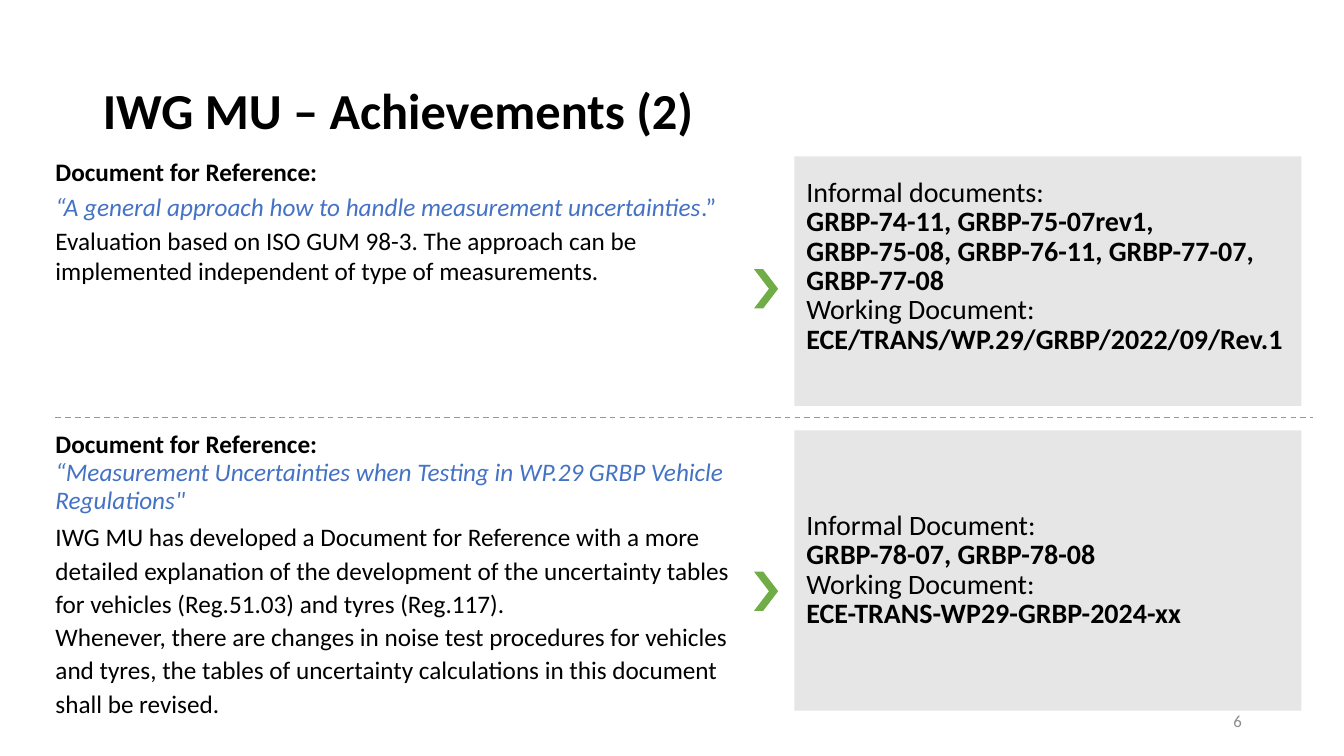
from dataclasses import dataclass

from lxml import etree
from pptx import Presentation
from pptx.dml.color import RGBColor
from pptx.enum.dml import MSO_LINE
from pptx.enum.shapes import MSO_CONNECTOR, MSO_SHAPE
from pptx.enum.text import MSO_ANCHOR, MSO_AUTO_SIZE, PP_ALIGN
from pptx.oxml.ns import qn
from pptx.util import Inches, Length, Pt

DASH = MSO_LINE.DASH
STRAIGHT = MSO_CONNECTOR.STRAIGHT
CHEVRON, RECTANGLE = MSO_SHAPE.CHEVRON, MSO_SHAPE.RECTANGLE
TOP, MIDDLE = MSO_ANCHOR.TOP, MSO_ANCHOR.MIDDLE
LEFT, RIGHT = PP_ALIGN.LEFT, PP_ALIGN.RIGHT
TITLE_ONLY = 5


@dataclass(frozen=True)
class Theme:
    font: str = "Calibri"
    black: str = "000000"
    blue: str = "4472C4"
    green: str = "70AD47"
    orange: str = "ED7D31"
    panel: str = "E7E6E6"
    gray: str = "8C8C8C"
    title: int = 36
    panel_text: int = 20
    body: int = 18
    number: int = 12


THEME = Theme()


@dataclass(frozen=True)
class Frame:
    """Place on the slide, in percent of its width and height."""
    left: float
    top: float
    width: float
    height: float

    def lengths(self) -> tuple[Length, Length, Length, Length]:
        return across(self.left), down(self.top), across(self.width), down(self.height)


@dataclass(frozen=True)
class Piece:
    text: str
    bold: bool = False
    italic: bool = False
    color: str = THEME.black


@dataclass(frozen=True)
class Block:
    """One paragraph; spacing is a share of the line or a length."""
    pieces: tuple[Piece, ...]
    spacing: float | Length = 1.0
    before: int = 0


@dataclass(frozen=True)
class Topic:
    """One row of the slide: description, chevron and document panel."""
    top: float
    text_height: float
    panel_height: float
    chevron_top: float
    description: tuple[Block, ...]
    documents: tuple[Piece, ...]
    panel_bottom_inset: float


SLIDE_WIDTH, SLIDE_HEIGHT = Inches(13.33), Inches(7.5)
TEXT_LEFT, TEXT_WIDTH = 4.13, 52.13
CHEVRON_LEFT, CHEVRON_WIDTH, CHEVRON_HEIGHT = 56.1, 1.8, 5.2
PANEL_LEFT, PANEL_WIDTH = 59.1, 37.73
RULE_TOP, RULE_RIGHT = 55.2, 97.67
TITLE_FRAME = Frame(6.9, 5.33, 86.25, 19.33)
NUMBER_FRAME = Frame(70.65, 92.67, 22.5, 5.33)
NO_INSETS = (0, 0, 0, 0)
DEFAULT_INSETS = (0.1, 0.05, 0.1, 0.05)

TOPICS = (
    Topic(
        20.7, 33, 33, 35.6,
        (
            Block((Piece("Document for Reference:", bold=True),)),
            Block((
                Piece("“A general approach how to handle measurement uncertainties",
                      italic=True, color=THEME.blue),
                Piece(".”", color=THEME.blue),
            ), before=3),
            Block((Piece("Evaluation based on ISO GUM 98-3. The approach can be "
                         "implemented independent of type of measurements."),), before=3),
        ),
        (
            Piece("Informal documents:"),
            Piece("GRBP-74-11, GRBP-75-07rev1, \n"
                  "GRBP-75-08, GRBP-76-11, GRBP-77-07, GRBP-77-08", bold=True),
            Piece("Working Document:"),
            Piece("ECE/TRANS/WP.29/GRBP/2022/09/Rev.1", bold=True),
        ),
        0.37,
    ),
    Topic(
        56.93, 37.73, 37.07, 75.6,
        (
            Block((
                Piece("Document for Reference:\n", bold=True),
                Piece("“Measurement Uncertainties when Testing in WP.29 GRBP Vehicle "
                      'Regulations"', italic=True, color=THEME.blue),
            ), Pt(20)),
            Block((Piece(
                "IWG MU has developed a Document for Reference with a more detailed "
                "explanation of the development of the uncertainty tables for vehicles "
                "(Reg.51.03) and tyres (Reg.117).\n"
                "Whenever, there are changes in noise test procedures for vehicles and "
                "tyres, the tables of uncertainty calculations in this document shall "
                "be revised."),), 1.1, 3),
        ),
        (
            Piece("Informal Document:"),
            Piece("GRBP-78-07, GRBP-78-08", bold=True),
            Piece("Working Document:"),
            Piece("ECE-TRANS-WP29-GRBP-2024-xx", bold=True),
        ),
        0.08,
    ),
)


def across(percent: float) -> Length:
    return Length(round(SLIDE_WIDTH * percent / 100))


def down(percent: float) -> Length:
    return Length(round(SLIDE_HEIGHT * percent / 100))


def write(shape, blocks: tuple[Block, ...], size: int, anchor=TOP,
          insets: tuple[float, ...] = NO_INSETS, alignment=LEFT) -> None:
    """Fill a shape with formatted paragraphs; insets are in inches."""
    frame = shape.text_frame
    frame.word_wrap = True
    frame.auto_size = MSO_AUTO_SIZE.NONE
    frame.vertical_anchor = anchor
    (frame.margin_left, frame.margin_top,
     frame.margin_right, frame.margin_bottom) = map(Inches, insets)
    for index, block in enumerate(blocks):
        paragraph = frame.add_paragraph() if index else frame.paragraphs[0]
        paragraph.alignment = alignment
        paragraph.line_spacing = block.spacing
        paragraph.space_before = Pt(block.before)
        for piece in block.pieces:
            for line_number, line in enumerate(piece.text.split("\n")):
                if line_number:
                    paragraph.add_line_break()
                if not line:
                    continue
                run = paragraph.add_run()
                run.text = line
                run.font.name = THEME.font
                run.font.size = Pt(size)
                run.font.bold = piece.bold
                run.font.italic = piece.italic
                run.font.color.rgb = RGBColor.from_string(piece.color)


def add_filled(slide, kind, frame: Frame, color: str):
    shape = slide.shapes.add_shape(kind, *frame.lengths())
    shape.shadow.inherit = False
    shape.fill.solid()
    shape.fill.fore_color.rgb = RGBColor.from_string(color)
    shape.line.fill.background()
    return shape


def add_topic(slide, topic: Topic) -> None:
    description = slide.shapes.add_textbox(
        *Frame(TEXT_LEFT, topic.top, TEXT_WIDTH, topic.text_height).lengths())
    write(description, topic.description, THEME.body)
    chevron = add_filled(slide, CHEVRON, Frame(
        CHEVRON_LEFT, topic.chevron_top, CHEVRON_WIDTH, CHEVRON_HEIGHT), THEME.green)
    chevron.adjustments[0] = 0.62
    panel = add_filled(slide, RECTANGLE, Frame(
        PANEL_LEFT, topic.top, PANEL_WIDTH, topic.panel_height), THEME.panel)
    blocks = tuple(Block((piece,), Pt(21)) for piece in topic.documents)
    write(panel, blocks, THEME.panel_text, MIDDLE,
          (0.12, 0.08, 0.12, topic.panel_bottom_inset))


def add_divider(slide) -> None:
    height = down(RULE_TOP)
    divider = slide.shapes.add_connector(
        STRAIGHT, across(TEXT_LEFT), height, across(RULE_RIGHT), height)
    divider.line.color.rgb = RGBColor.from_string(THEME.orange)
    divider.line.width = Pt(1)
    divider.line.dash_style = DASH
    etree.SubElement(divider._element.spPr, qn("a:effectLst"))


def main() -> None:
    presentation = Presentation()
    presentation.slide_width, presentation.slide_height = SLIDE_WIDTH, SLIDE_HEIGHT
    slide = presentation.slides.add_slide(presentation.slide_layouts[TITLE_ONLY])
    title = slide.shapes.title
    title.left, title.top, title.width, title.height = TITLE_FRAME.lengths()
    heading = Block((Piece("IWG MU – Achievements (2)", bold=True),), 0.9)
    write(title, (heading,), THEME.title, MIDDLE, DEFAULT_INSETS)
    add_divider(slide)
    for topic in TOPICS:
        add_topic(slide, topic)
    number = slide.shapes.add_textbox(*NUMBER_FRAME.lengths())
    write(number, (Block((Piece("6", color=THEME.gray),)),), THEME.number,
          MIDDLE, DEFAULT_INSETS, RIGHT)
    presentation.save("out.pptx")


if __name__ == "__main__":
    main()
